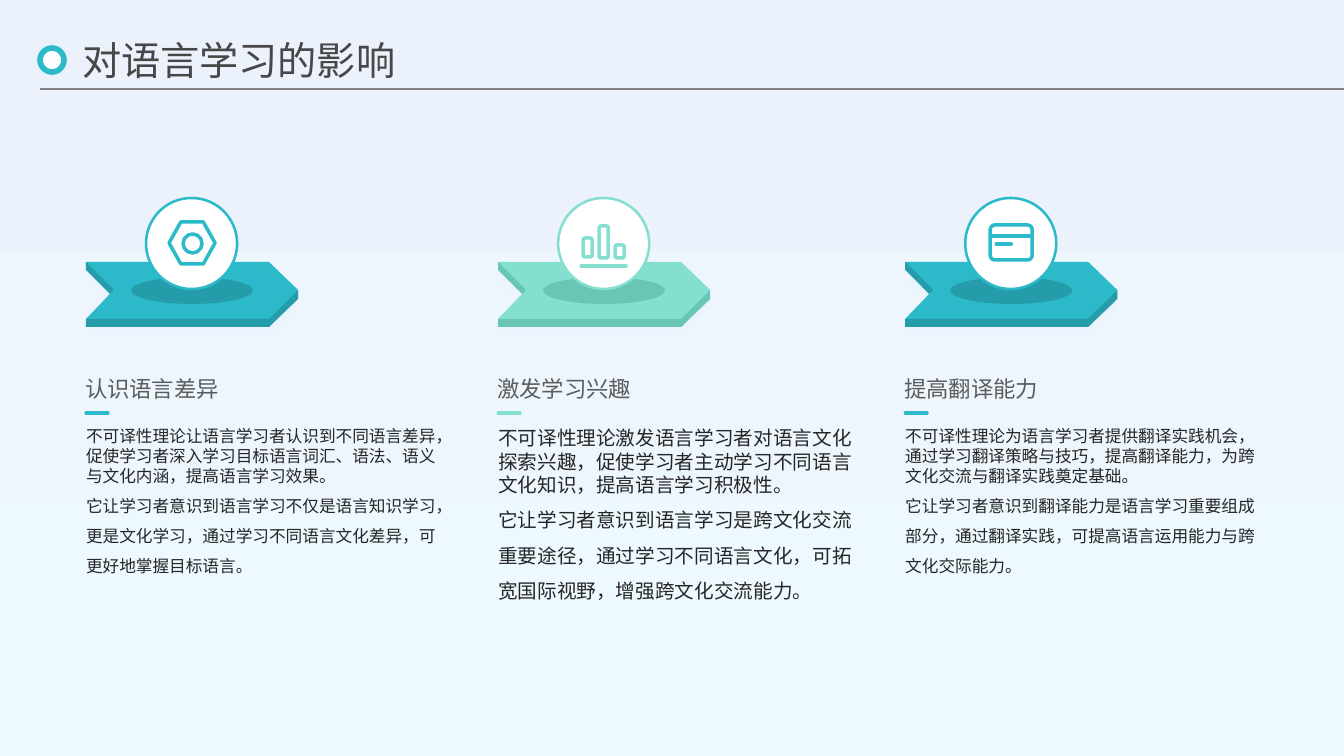
from dataclasses import dataclass

from lxml import etree
from pptx import Presentation
from pptx.dml.color import RGBColor
from pptx.enum.shapes import MSO_CONNECTOR, MSO_SHAPE
from pptx.enum.text import MSO_ANCHOR
from pptx.oxml.ns import qn
from pptx.util import Emu, Inches, Pt

RECT, ELLIPSE = MSO_SHAPE.RECTANGLE, MSO_SHAPE.OVAL
ROUNDED, HEXAGON = MSO_SHAPE.ROUNDED_RECTANGLE, MSO_SHAPE.HEXAGON
STRAIGHT = MSO_CONNECTOR.STRAIGHT
TOP, MIDDLE, BOTTOM = MSO_ANCHOR.TOP, MSO_ANCHOR.MIDDLE, MSO_ANCHOR.BOTTOM
EMU_PER_PX = 914400 / 100.8


@dataclass(frozen=True)
class Theme:
    font: str = "Noto Sans CJK SC"
    sky_top: str = "EBF2FB"
    sky_bottom: str = "EEF8FF"
    white: str = "FFFFFF"
    teal: str = "2CB9C9"
    teal_shade: str = "165C64"
    mint: str = "85DFD0"
    mint_shade: str = "258D7C"
    haze: str = "DBEFF9"
    rule: str = "7F7F7F"
    title: str = "474747"
    heading: str = "5C5C5C"
    body: str = "262626"
    title_pt: float = 28
    heading_pt: float = 16
    body_pt: float = 11.9
    body_large_pt: float = 14
    icon_pt: float = 2.5


T = Theme()


@dataclass(frozen=True)
class Stroke:
    """Outlined icon part; x counts from the column's left edge, no shape means a line."""
    shape: MSO_SHAPE | None
    x: int
    y: int
    w: int
    h: int = 0
    adj: float | None = None


@dataclass(frozen=True)
class Column:
    x: int
    color: str
    shade: str
    icon: tuple[Stroke, ...]
    heading: str
    body: str
    body_pt: float


NUT = (Stroke(HEXAGON, 83, 222, 46, 42, 0.28), Stroke(ELLIPSE, 97, 234, 19, 19))
BARS = (
    Stroke(ROUNDED, 85, 238, 9, 19, 0.2),
    Stroke(ROUNDED, 101, 226, 9, 32, 0.2),
    Stroke(ROUNDED, 117, 245, 9, 13, 0.2),
    Stroke(None, 83, 266, 45),
)
CARD = (
    Stroke(ROUNDED, 85, 225, 42, 35, 0.13),
    Stroke(None, 85, 236, 42),
    Stroke(None, 91, 244, 15),
)

COLUMNS = (
    Column(86, T.teal, T.teal_shade, NUT, "认识语言差异",
           "不可译性理论让语言学习者认识到不同语言差异，促使学习者深入学习目标语言词汇、语法、语义与文化内涵，提高语言学习效果。\n"
           "它让学习者意识到语言学习不仅是语言知识学习，更是文化学习，通过学习不同语言文化差异，可更好地掌握目标语言。",
           T.body_pt),
    Column(498, T.mint, T.mint_shade, BARS, "激发学习兴趣",
           "不可译性理论激发语言学习者对语言文化探索兴趣，促使学习者主动学习不同语言文化知识，提高语言学习积极性。\n"
           "它让学习者意识到语言学习是跨文化交流重要途径，通过学习不同语言文化，可拓宽国际视野，增强跨文化交流能力。",
           T.body_large_pt),
    Column(905, T.teal, T.teal_shade, CARD, "提高翻译能力",
           "不可译性理论为语言学习者提供翻译实践机会，通过学习翻译策略与技巧，提高翻译能力，为跨文化交流与翻译实践奠定基础。\n"
           "它让学习者意识到翻译能力是语言学习重要组成部分，通过翻译实践，可提高语言运用能力与跨文化交际能力。",
           T.body_pt),
)

# Arrow outlines, x from the column's left edge
ARROW_SHADOW = ((212, 308), (183, 336), (0, 336), (28, 308), (0, 279), (183, 279))
ARROW_BODY = ((212, 290), (212, 299), (183, 327), (0, 327), (0, 319),
              (24, 294), (0, 270), (0, 262), (183, 262))
ARROW_TIP_SIDE = ((183, 327), (183, 319), (212, 290), (212, 299))
ARROW_NOTCH_SIDE = ((0, 270), (0, 262), (28, 290), (24, 294))


def px(n: float) -> Emu:
    return Emu(round(n * EMU_PER_PX))


def paint(sp, fill: str | None, alpha: int = 100, line: str | None = None, pt: float = 0) -> None:
    sp.shadow.inherit = False
    if fill:
        sp.fill.solid()
        sp.fill.fore_color.rgb = RGBColor.from_string(fill)
        if alpha < 100:
            clr = sp.fill._xPr.find(qn("a:solidFill"))[0]
            etree.SubElement(clr, qn("a:alpha"), val=str(alpha * 1000))
    else:
        sp.fill.background()
    if line:
        sp.line.color.rgb = RGBColor.from_string(line)
        sp.line.width = Pt(pt)
    else:
        sp.line.fill.background()


def add_preset(shapes, kind: MSO_SHAPE, x: int, y: int, w: int, h: int):
    return shapes.add_shape(kind, px(x), px(y), px(w), px(h))


def add_outline(shapes, x: int, points: tuple, fill: str, alpha: int = 100) -> None:
    (x0, y0), *rest = points
    fb = shapes.build_freeform(x + x0, y0, scale=EMU_PER_PX)
    fb.add_line_segments([(x + dx, y) for dx, y in rest], close=True)
    paint(fb.convert_to_shape(), fill, alpha)


def add_rule(shapes, x: int, y: int, w: int, color: str, pt: float, cap: str = "rnd") -> None:
    cn = shapes.add_connector(STRAIGHT, px(x), px(y), px(x + w), px(y))
    cn.line.color.rgb = RGBColor.from_string(color)
    cn.line.width = Pt(pt)
    cn.line._get_or_add_ln().set("cap", cap)
    etree.SubElement(cn._element.spPr, qn("a:effectLst"))


def add_text(shapes, x: int, y: int, w: int, h: int, text: str, pt: float, color: str,
             anchor: MSO_ANCHOR, spacings: tuple) -> None:
    tf = shapes.add_textbox(px(x), px(y), px(w), px(h)).text_frame
    tf.word_wrap = True
    tf.vertical_anchor = anchor
    tf.margin_left = tf.margin_right = tf.margin_top = tf.margin_bottom = 0
    tf.text = text
    for p, spacing in zip(tf.paragraphs, spacings):
        p.line_spacing = spacing
        for r in p.runs:
            r.font.size = Pt(pt)
            r.font.name = T.font
            r.font.color.rgb = RGBColor.from_string(color)
            rPr = r._r.get_or_add_rPr()
            rPr.set("lang", "zh-CN")
            etree.SubElement(rPr, qn("a:ea"), typeface=T.font)


def add_icon(shapes, col: Column) -> None:
    for s in col.icon:
        if s.shape is None:
            add_rule(shapes, col.x + s.x, s.y, s.w, col.color, T.icon_pt)
            continue
        sp = add_preset(shapes, s.shape, col.x + s.x, s.y, s.w, s.h)
        if s.adj is not None:
            sp.adjustments[0] = s.adj
        paint(sp, None, line=col.color, pt=T.icon_pt)


def add_column(shapes, col: Column) -> None:
    # Arrow with darker sides
    add_outline(shapes, col.x, ARROW_SHADOW, T.haze, 10)
    add_outline(shapes, col.x, ARROW_BODY, col.color)
    paint(add_preset(shapes, RECT, col.x, 319, 183, 8), col.shade, 30)
    add_outline(shapes, col.x, ARROW_TIP_SIDE, col.shade, 30)
    add_outline(shapes, col.x, ARROW_NOTCH_SIDE, col.shade, 30)

    # Badge and its icon
    paint(add_preset(shapes, ELLIPSE, col.x + 45, 277, 122, 27), col.shade, 30)
    paint(add_preset(shapes, ELLIPSE, col.x + 60, 198, 91, 91), T.white, line=col.color, pt=1.8)
    add_icon(shapes, col)

    # Texts
    add_text(shapes, col.x, 426, 365, 178, col.body, col.body_pt, T.body, TOP,
             (Pt(col.body_pt * 1.2), Pt(col.body_pt * 1.8)))
    add_rule(shapes, col.x, 413, 22, col.color, 2.2)
    add_text(shapes, col.x - 1, 330, 365, 72, col.heading, T.heading_pt, T.heading, BOTTOM, (1.2,))


def main() -> None:
    prs = Presentation()
    prs.slide_width, prs.slide_height = Inches(13.33), Inches(7.5)
    shapes = prs.slides.add_slide(prs.slide_layouts[6]).shapes

    # Background
    sky = shapes.add_shape(RECT, 0, 0, prs.slide_width, prs.slide_height)
    paint(sky, None)
    sky.fill.gradient()
    sky.fill.gradient_angle = 270
    for stop, color, position in zip(sky.fill.gradient_stops, (T.sky_top, T.sky_bottom), (0, 1)):
        stop.color.rgb = RGBColor.from_string(color)
        stop.position = position

    for col in COLUMNS:
        add_column(shapes, col)

    # Title bar
    paint(add_preset(shapes, ELLIPSE, 40, 48, 24, 24), T.white, line=T.teal, pt=4)
    add_text(shapes, 82, 32, 1167, 47, "对语言学习的影响", T.title_pt, T.title, MIDDLE, (1.2,))
    add_rule(shapes, 40, 89, 1304, T.rule, 1.25, "flat")

    prs.save("out.pptx")


if __name__ == "__main__":
    main()
